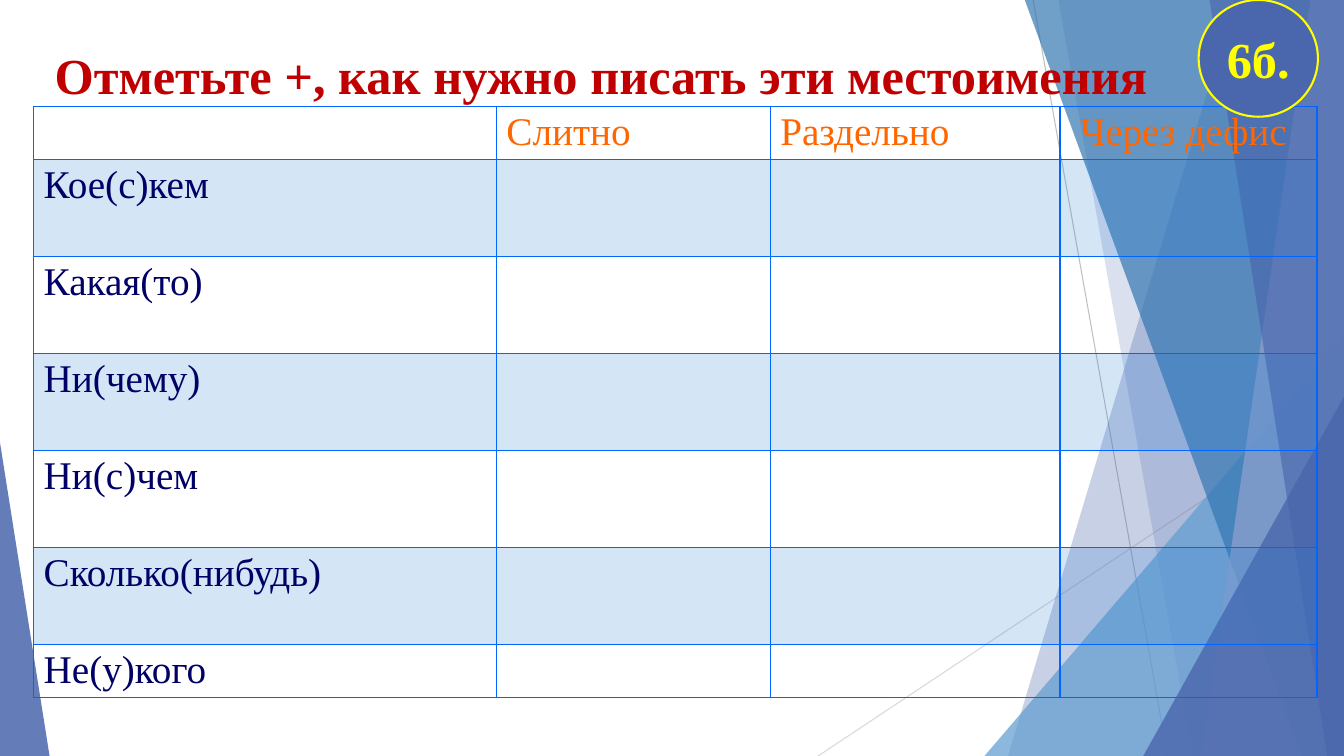
from lxml.etree import SubElement
from pptx import Presentation
from pptx.dml.color import RGBColor
from pptx.enum.shapes import MSO_CONNECTOR, MSO_SHAPE
from pptx.enum.text import MSO_ANCHOR, PP_ALIGN
from pptx.oxml.ns import qn
from pptx.util import Inches, Pt

COLUMNS, ROWS = 160, 90
COLORS = {
    "navy": "4A66AC", "sky": "629DD1", "blue": "3477B2", "lavender": "90A2CF",
    "gray": "BFBFBF", "light gray": "D9D9D9", "band": "297FD5", "border": "0066FF",
    "title": "C00000", "heading": "FF6600", "word": "000066", "yellow": "FFFF00",
}
HEADINGS = ["", "Слитно", "Раздельно", " Через дефис"]
PRONOUNS = ["Кое(с)кем", "Какая(то)", "Ни(чему)", "Ни(с)чем", "Сколько(нибудь)", "Не(у)кого"]


def set_all(target, values):
    for name, value in values.items():
        setattr(target, name, value)


class SlideBuilder:
    """Draws on one slide; lengths are columns and rows of a 160 by 90 grid."""

    font_name = "Times New Roman"

    def __init__(self, presentation):
        self.unit = presentation.slide_width / COLUMNS
        self.slide = presentation.slides.add_slide(presentation.slide_layouts[5])
        self.shapes = self.slide.shapes

    def lengths(self, *values):
        return [round(value * self.unit) for value in values]

    def paint(self, fill, color, opacity=100):
        fill.solid()
        fill.fore_color.rgb = RGBColor.from_string(COLORS[color])
        if opacity < 100:
            color_element = fill._xPr.find(qn("a:solidFill"))[0]
            SubElement(color_element, qn("a:alpha"), val=str(opacity * 1000))

    def add_text(self, text_frame, text, color, size, bold=False, align=PP_ALIGN.LEFT):
        paragraph = text_frame.paragraphs[0]
        paragraph.alignment = align
        run = paragraph.add_run()
        run.text = text
        set_all(run.font, {"name": self.font_name, "size": Pt(size), "bold": bold})
        run.font.color.rgb = RGBColor.from_string(COLORS[color])

    def line(self, start, end, color):
        connector = self.shapes.add_connector(
            MSO_CONNECTOR.STRAIGHT, *self.lengths(*start, *end))
        connector.line.width = Pt(0.75)
        self.paint(connector.line.fill, color)
        SubElement(connector._element.spPr, qn("a:effectLst"))

    def facet(self, top, bottom, color, opacity):
        """Fill from a slanted edge to the right side of the slide."""
        corners = [(top, 0), (COLUMNS, 0), (COLUMNS, ROWS), (bottom, ROWS)]
        builder = self.shapes.build_freeform(*corners[0], scale=self.unit)
        builder.add_line_segments(corners[1:], close=True)
        self.finish(builder.convert_to_shape(), color, opacity)

    def triangle(self, left, top, width, peak, color, opacity):
        shape = self.shapes.add_shape(
            MSO_SHAPE.ISOSCELES_TRIANGLE, *self.lengths(left, top, width, ROWS - top))
        shape.adjustments[0] = peak
        self.finish(shape, color, opacity)

    def finish(self, shape, color, opacity=100):
        shape.shadow.inherit = False
        shape.line.fill.background()
        self.paint(shape.fill, color, opacity)

    def title(self, text, *box):
        title = self.shapes.title
        set_all(title, dict(zip(("left", "top", "width", "height"), self.lengths(*box))))
        set_all(title.text_frame, {"word_wrap": True, "vertical_anchor": MSO_ANCHOR.MIDDLE})
        self.add_text(title.text_frame, text, "title", 36, bold=True)
        self.shapes._spTree.append(title._element)  # in front of the facets

    def badge(self, text, *box):
        badge = self.shapes.add_shape(MSO_SHAPE.OVAL, *self.lengths(*box))
        self.finish(badge, "navy")
        self.paint(badge.line.fill, "yellow")
        badge.line.width = Pt(1.5)
        set_all(badge.text_frame, {"word_wrap": False, "vertical_anchor": MSO_ANCHOR.MIDDLE})
        self.add_text(badge.text_frame, text, "yellow", 36, bold=True, align=PP_ALIGN.CENTER)

    def border(self, cell):
        for side in ("lnL", "lnR", "lnT", "lnB"):
            line = SubElement(cell._tc.get_or_add_tcPr(), qn(f"a:{side}"), w=str(Pt(1)))
            fill = SubElement(line, qn("a:solidFill"))
            SubElement(fill, qn("a:srgbClr"), val=COLORS["border"])

    def table(self, content, left, top, widths, heights):
        frame = self.shapes.add_table(
            len(heights), len(widths),
            *self.lengths(left, top, sum(widths), sum(heights)))
        table = frame.table
        set_all(table, {"first_row": False, "horz_banding": False})
        for column, width in zip(table.columns, self.lengths(*widths)):
            column.width = width
        for row, height in zip(table.rows, self.lengths(*heights)):
            row.height = height
        for row_index, texts in enumerate(content):
            for column_index, text in enumerate(texts):
                cell = table.cell(row_index, column_index)
                set_all(cell, {"margin_top": Inches(0.04), "margin_bottom": Inches(0.04)})
                self.border(cell)
                if row_index % 2:
                    self.paint(cell.fill, "band", 20)
                else:
                    cell.fill.background()
                if text:
                    self.add_text(cell.text_frame, text, "word" if row_index else "heading", 28)


def main():
    presentation = Presentation()
    set_all(presentation, {"slide_width": Inches(13.3333), "slide_height": Inches(7.5)})
    builder = SlideBuilder(presentation)

    builder.line((123, 0), (139, ROWS), "gray")
    builder.line((COLUMNS, 48.4), (97.4, ROWS), "light gray")
    builder.facet(147.4, 120.5, "navy", 30)
    builder.facet(126, 142, "navy", 20)
    builder.triangle(117.2, 40, 42.8, 1, "sky", 72)
    builder.facet(122.5, 154.9, "blue", 70)
    builder.facet(156.4, 143, "lavender", 70)
    builder.facet(143.5, 158.2, "navy", 65)
    builder.triangle(136.1, 47.2, 23.9, 1, "navy", 80)
    builder.triangle(0, 52.7, 5.9, 0, "navy", 85)

    builder.title("Отметьте +, как нужно писать эти местоимения", 5.3, 3.8, 133.4, 10.1)
    content = [HEADINGS] + [[pronoun, "", "", ""] for pronoun in PRONOUNS]
    builder.table(content, 4, 12.7, [55.1, 32.6, 34.5, 30.6], [6.3] + [11.55] * 5 + [6.3])
    builder.badge("6б.", 142.7, 0, 14.2, 13.9)
    presentation.save("out.pptx")


if __name__ == "__main__":
    main()
